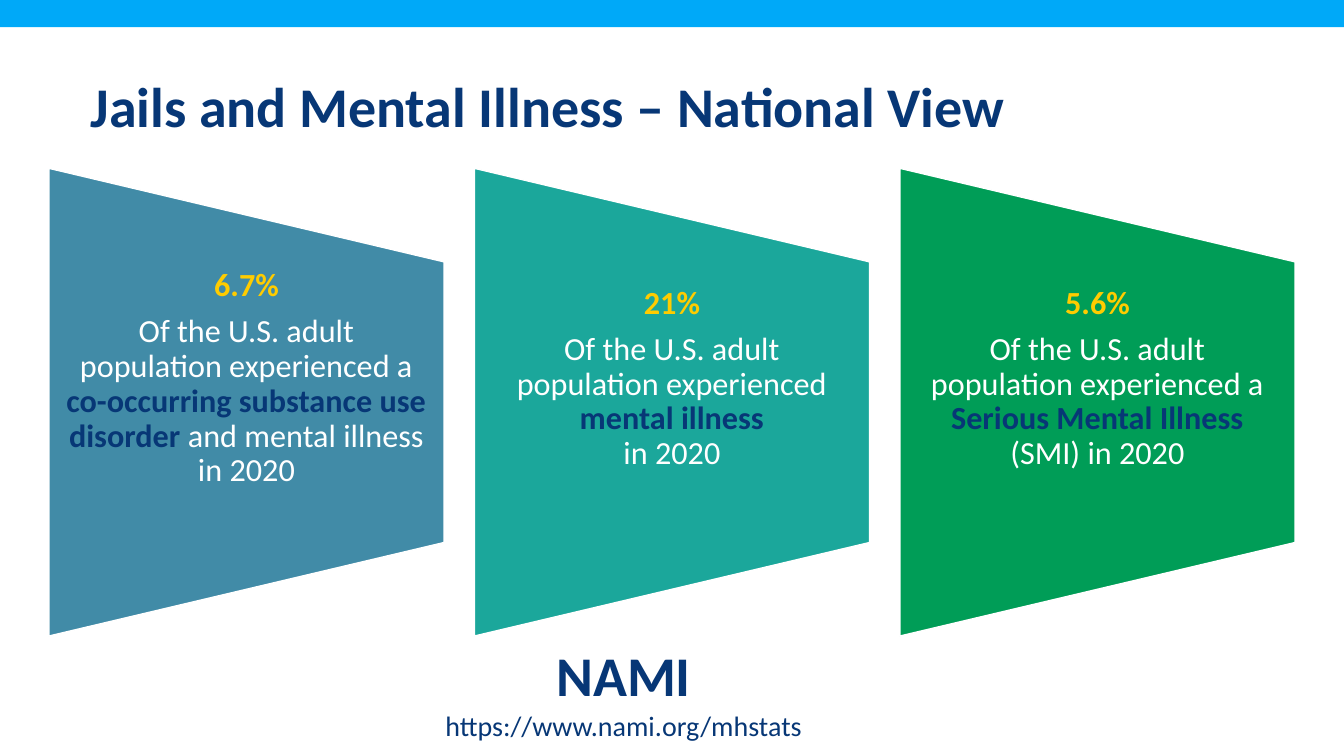
from pptx import Presentation
from pptx.dml.color import RGBColor
from pptx.enum.shapes import MSO_SHAPE
from pptx.enum.text import MSO_ANCHOR, PP_ALIGN
from pptx.util import Inches, Pt

NAVY = RGBColor(0x07, 0x37, 0x76)
SKY = RGBColor(0x00, 0xA9, 0xF8)
STEEL = RGBColor(0x41, 0x8B, 0xA7)
TEAL = RGBColor(0x1B, 0xA7, 0x9B)
GREEN = RGBColor(0x00, 0x9D, 0x57)
YELLOW = RGBColor(0xFF, 0xCC, 0x00)
WHITE = RGBColor(0xFF, 0xFF, 0xFF)

TITLE = "Jails and Mental Illness – National View"
# Fill, share of adults, lead-in, emphasised condition, ending
CARDS = [
    (STEEL, "6.7%", "Of the U.S. adult population experienced a ",
     "co-occurring substance use disorder ", "and mental illness in 2020"),
    (TEAL, "21%", "Of the U.S. adult population experienced ",
     "mental illness", "\nin 2020"),
    (GREEN, "5.6%", "Of the U.S. adult population experienced a ",
     "Serious Mental Illness ", "(SMI) in 2020"),
]
SOURCE = [("NAMI", 40, True), ("https://www.nami.org/mhstats", 20, False)]

SLIDE_WIDTH, SLIDE_HEIGHT = 13.33, 7.5
CARD_WIDTH, CARD_HEIGHT = 3.92, 4.64
CARD_PITCH = 4.22
CARD_MIDDLE = 3.99
CARD_TEXT_HEIGHT = CARD_HEIGHT * 0.6
CARD_LEFT = (SLIDE_WIDTH - 2 * CARD_PITCH - CARD_WIDTH) / 2
CARD_TEXT_LIFT = 0.46


def add_run(paragraph, text, size, color, bold=False):
    """Add a run; a leading newline becomes a line break."""
    if text.startswith("\n"):
        paragraph.add_line_break()
    run = paragraph.add_run()
    run.text = text.lstrip("\n")
    font = run.font
    font.name, font.size, font.bold = "Calibri", Pt(size), bold
    font.color.rgb = color


def add_text_frame(slide, left, top, width, height, anchor=MSO_ANCHOR.TOP):
    box = slide.shapes.add_textbox(
        Inches(left), Inches(top), Inches(width), Inches(height))
    frame = box.text_frame
    frame.word_wrap = True
    frame.vertical_anchor = anchor
    return frame


def add_filled_shape(slide, kind, left, top, width, height, color):
    shape = slide.shapes.add_shape(
        kind, Inches(left), Inches(top), Inches(width), Inches(height))
    shape.shadow.inherit = False
    shape.fill.solid()
    shape.fill.fore_color.rgb = color
    shape.line.fill.background()
    return shape


def add_card(slide, left, color, share, lead, condition, ending):
    # The shape is placed unrotated, then turned about its centre.
    card = add_filled_shape(
        slide, MSO_SHAPE.FLOWCHART_MANUAL_OPERATION,
        left + (CARD_WIDTH - CARD_HEIGHT) / 2, CARD_MIDDLE - CARD_WIDTH / 2,
        CARD_HEIGHT, CARD_WIDTH, color)
    card.rotation = 270
    card.line.color.rgb = WHITE
    card.line.width = Pt(1)

    frame = add_text_frame(
        slide, left, CARD_MIDDLE - CARD_TEXT_HEIGHT / 2,
        CARD_WIDTH, CARD_TEXT_HEIGHT, MSO_ANCHOR.MIDDLE)
    frame.margin_left = frame.margin_right = Inches(0.16)
    frame.margin_top = 0
    frame.margin_bottom = Inches(CARD_TEXT_LIFT)
    figure, statement = frame.paragraphs[0], frame.add_paragraph()
    for paragraph in (figure, statement):
        paragraph.alignment = PP_ALIGN.CENTER
        paragraph.line_spacing = 0.9
    figure.space_after = Pt(8)
    add_run(figure, share, 23, YELLOW, True)
    add_run(statement, lead, 23, WHITE)
    add_run(statement, condition, 23, NAVY, True)
    add_run(statement, ending, 23, WHITE)


def main():
    presentation = Presentation()
    presentation.slide_width = Inches(SLIDE_WIDTH)
    presentation.slide_height = Inches(SLIDE_HEIGHT)
    slide = presentation.slides.add_slide(presentation.slide_layouts[6])

    add_filled_shape(slide, MSO_SHAPE.RECTANGLE, 0, 0, SLIDE_WIDTH, 0.27, SKY)

    title = add_text_frame(slide, 0.8, 0.28, 10.78, 1.15, MSO_ANCHOR.BOTTOM)
    title.paragraphs[0].line_spacing = 0.9
    add_run(title.paragraphs[0], TITLE, 40, NAVY, True)

    for index, card in enumerate(CARDS):
        add_card(slide, CARD_LEFT + index * CARD_PITCH, *card)

    source = add_text_frame(slide, 4.08, 6.31, 4.21, 1.11)
    for index, (text, size, bold) in enumerate(SOURCE):
        paragraph = source.add_paragraph() if index else source.paragraphs[0]
        paragraph.alignment = PP_ALIGN.CENTER
        add_run(paragraph, text, size, NAVY, bold)

    presentation.save("out.pptx")


if __name__ == "__main__":
    main()
